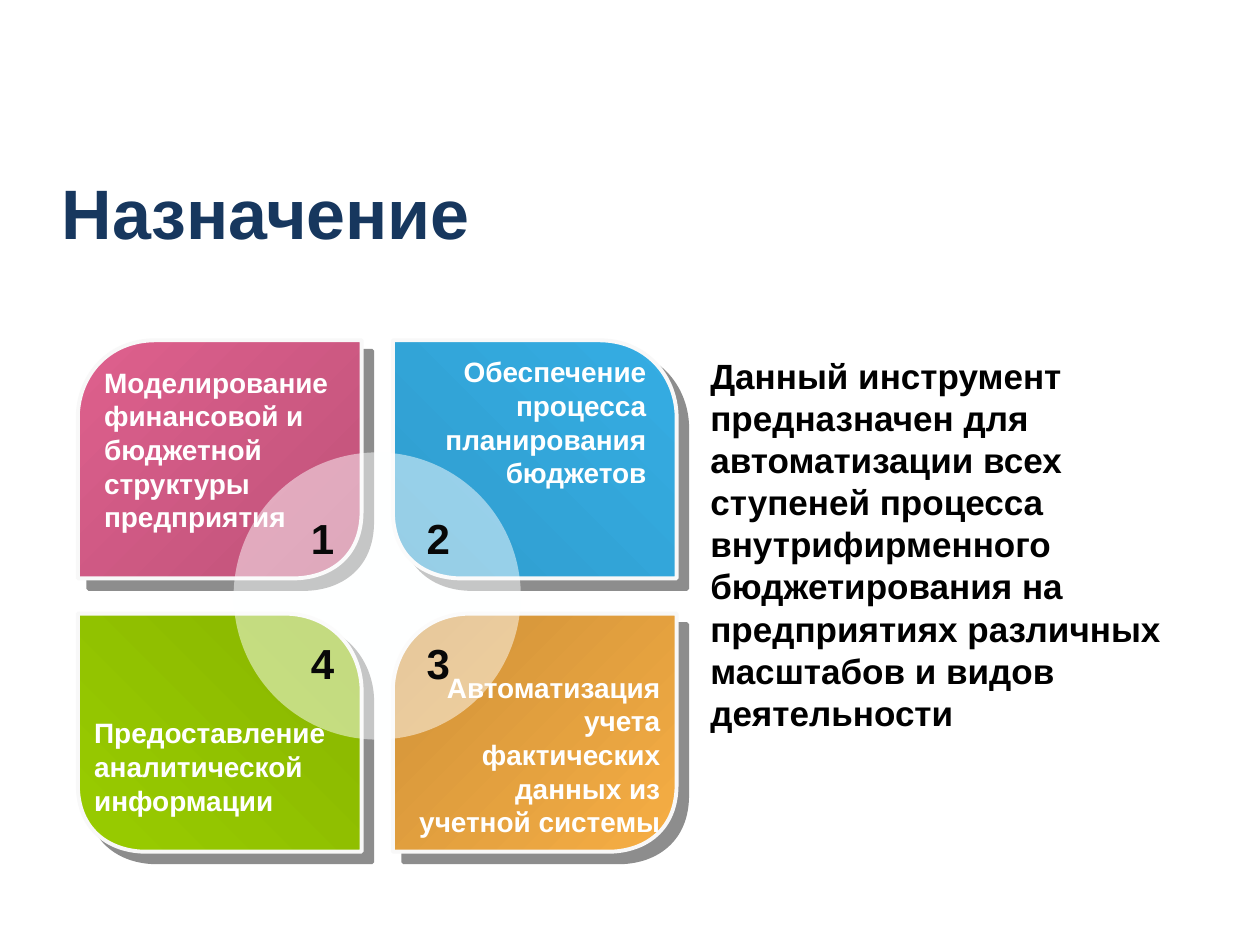
import lxml.etree
import pptx
import pptx.dml.color
import pptx.enum.shapes
import pptx.enum.text
import pptx.oxml.ns
import pptx.util

Cm = pptx.util.Cm
RGBColor = pptx.dml.color.RGBColor
Align = pptx.enum.text.PP_ALIGN
Anchor = pptx.enum.text.MSO_ANCHOR
AutoSize = pptx.enum.text.MSO_AUTO_SIZE
Preset = pptx.enum.shapes.MSO_SHAPE

NAVY = RGBColor(0x17, 0x37, 0x5E)
BLACK = RGBColor(0, 0, 0)
INK = RGBColor(0x08, 0x08, 0x08)
WHITE = RGBColor(255, 255, 255)
DISC = RGBColor(0xFE, 0xFF, 0xFF)
OUTLINE = RGBColor(0xF8, 0xF8, 0xF8)
SHADOW = RGBColor(0x1C, 0x1C, 0x1C)
PINK = RGBColor(0xDE, 0x60, 0x8D)
BLUE = RGBColor(0x35, 0xAD, 0xE3)
GREEN = RGBColor(0x99, 0xCC, 0x00)
ORANGE = RGBColor(0xF6, 0xAE, 0x44)

TITLE_FONT = {"name": "Arial", "size": pptx.util.Pt(40), "bold": True}
LABEL_FONT = {"name": "Arial", "size": pptx.util.Pt(16), "bold": True}
NUMBER_FONT = {"name": "Arial", "size": pptx.util.Pt(24), "bold": True}
BODY_FONT = {"name": "Arial", "size": pptx.util.Pt(20), "bold": True}

PETAL_WIDTH, PETAL_HEIGHT = 5.72, 4.8
DISC_SIZE = 5.79
LARGE_CORNER = [(0, 1.5), (0.03, 0.71), (0.61, 0), (1.57, 0)]
SMALL_CORNER = [(5.72, 3.45), (5.72, 4.37), (5.08, 4.78), (4.39, 4.8)]

PETALS = [
    {"column": 0, "row": 0, "color": PINK, "shades": (70.59, 100), "angle": 135,
     "number": "1", "box": (0.28, 0.38, 5.16, 3.68),
     "label": "Моделирование финансовой и бюджетной структуры предприятия"},
    {"column": 1, "row": 0, "color": BLUE, "shades": (80.39, 100), "angle": 45,
     "number": "2", "box": (6.15, 0.17, 5.56, 3),
     "label": "Обеспечение процесса планирования бюджетов"},
    {"column": 0, "row": 1, "color": GREEN, "shades": (100, 76.47), "angle": 45,
     "number": "4", "box": (0.08, 7.45, 5.56, 2.31),
     "label": "Предоставление аналитической информации"},
    {"column": 1, "row": 1, "color": ORANGE, "shades": (66.67, 100), "angle": 315,
     "number": "3", "box": (6.43, 6.53, 5.56, 3.68),
     "label": "Автоматизация учета фактических данных из учетной системы"},
]


def write_text(shape, text, font, color, alignment=Align.LEFT):
    """Write one formatted paragraph into a shape."""
    paragraph = shape.text_frame.paragraphs[0]
    paragraph.alignment = alignment
    run = paragraph.add_run()
    run.text = text
    for name, value in font.items():
        setattr(run.font, name, value)
    run.font.color.rgb = color


def add_text(slide, box, text, font, color, alignment=Align.LEFT, wrap=True):
    """Add a text box at a box given in centimetres."""
    shape = slide.shapes.add_textbox(*map(Cm, box))
    shape.text_frame.word_wrap = wrap
    shape.text_frame.auto_size = AutoSize.SHAPE_TO_FIT_TEXT
    write_text(shape, text, font, color, alignment)


def add_element(parent, tag, **attributes):
    """Append a DrawingML element to its parent."""
    element = lxml.etree.SubElement(parent, pptx.oxml.ns.qn(tag))
    for name, value in attributes.items():
        element.set(name, str(value))
    return element


def find_all(shape, tag):
    """List the elements with a tag in the shape properties."""
    return shape.element.spPr.findall(".//" + pptx.oxml.ns.qn(tag))


def add_translucent(slide, preset, box, color, opacity):
    """Add a borderless preset shape with a see-through fill."""
    shape = slide.shapes.add_shape(preset, *map(Cm, box))
    shape.shadow.inherit = False
    shape.fill.solid()
    shape.fill.fore_color.rgb = color
    shape.line.fill.background()
    add_element(find_all(shape, "a:srgbClr")[0], "a:alpha", val=opacity * 1000)
    return shape


def straight(start, end):
    """Return curve points for a straight side after its start."""
    middle = tuple((a + b) / 2 for a, b in zip(start, end))
    return [middle, end, end]


def round_sides(shape):
    """Turn each three line points of a freeform into one curve."""
    lines = find_all(shape, "a:lnTo")
    for first in range(0, len(lines), 3):
        curve = lines[first].makeelement(pptx.oxml.ns.qn("a:cubicBezTo"))
        lines[first].addprevious(curve)
        for line in lines[first:first + 3]:
            curve.append(line[0])
            line.getparent().remove(line)


def add_petal(slide, left, top, petal):
    """Draw a petal with two opposite round corners."""
    corner = PETAL_WIDTH, 0
    base = 0, PETAL_HEIGHT
    outline = [*LARGE_CORNER, *straight(LARGE_CORNER[-1], corner),
               *straight(corner, SMALL_CORNER[0]), *SMALL_CORNER[1:],
               *straight(SMALL_CORNER[-1], base), *straight(base, LARGE_CORNER[0])]
    mirrored = petal["column"] != petal["row"]
    points = [(Cm(left + (PETAL_WIDTH - x if mirrored else x)), Cm(top + y))
              for x, y in outline]
    builder = slide.shapes.build_freeform(*points[0])
    builder.add_line_segments(points[1:], close=True)
    shape = builder.convert_to_shape()
    round_sides(shape)
    shape.fill.gradient()
    shape.fill.gradient_angle = petal["angle"]
    for stop in shape.fill.gradient_stops:
        stop.color.rgb = petal["color"]
    for color, shade in zip(find_all(shape, "a:srgbClr"), petal["shades"]):
        if shade < 100:
            add_element(color, "a:shade", val=round(shade * 1000))
    shape.line.color.rgb = OUTLINE
    shape.line.width = pptx.util.Pt(2.25)
    shape.shadow.inherit = False
    shadow = add_element(find_all(shape, "a:effectLst")[0], "a:outerShdw", blurRad=0,
                         dist=pptx.util.Pt(8.5), dir=45 * 60000, algn="ctr",
                         rotWithShape=0)
    add_element(add_element(shadow, "a:srgbClr", val=SHADOW), "a:alpha", val=50000)


def add_purpose_diagram(slide, left, top, width, height):
    """Build the four petals, the disc, the labels and the numbers."""
    for petal in PETALS:
        add_petal(slide, left + petal["column"] * (width - PETAL_WIDTH),
                  top + petal["row"] * (height - PETAL_HEIGHT), petal)
    add_translucent(slide, Preset.OVAL,
                    (left + (width - DISC_SIZE) / 2, top + (height - DISC_SIZE) / 2,
                     DISC_SIZE, DISC_SIZE), DISC, 50)
    for petal in PETALS:
        x, y, *size = petal["box"]
        add_text(slide, (left + x, top + y, *size), petal["label"], LABEL_FONT, WHITE,
                 Align.RIGHT if petal["column"] else Align.LEFT)
    for petal in PETALS:
        x, y = 4.45 + petal["column"] * 2.33, 3.35 + petal["row"] * 2.52
        add_text(slide, (left + x, top + y, 0.99, 1.27), petal["number"],
                 NUMBER_FONT, INK, wrap=False)


def add_backdrop(slide, box):
    """Lay the pale panel behind everything else."""
    panel = add_translucent(slide, Preset.RECTANGLE, box, WHITE, 81)
    slide.shapes.title.element.addprevious(panel.element)


def add_title(slide, box):
    """Place and format the title placeholder."""
    title = slide.shapes.title
    title.left, title.top, title.width, title.height = map(Cm, box)
    title.text_frame.vertical_anchor = Anchor.MIDDLE
    write_text(title, "Назначение", TITLE_FONT, NAVY)


def add_description(slide, box):
    """Add the description beside the diagram."""
    add_text(slide, box, "Данный инструмент предназначен для автоматизации всех ступеней "
             "процесса внутрифирменного бюджетирования на предприятиях различных "
             "масштабов и видов деятельности", BODY_FONT, BLACK)


def main():
    """Build and save the presentation."""
    presentation = pptx.Presentation()
    presentation.slide_width, presentation.slide_height = Cm(25.4), Cm(19.05)
    slide = presentation.slides.add_slide(presentation.slide_layouts[5])
    add_backdrop(slide, (0, 2.54, 25.4, 16.51))
    add_title(slide, (0.99, 3.33, 23.34, 1.88))
    add_purpose_diagram(slide, 1.57, 6.86, 12.07, 10.31)
    add_description(slide, (14.07, 7.03, 10.92, 7.95))
    presentation.save("out.pptx")


if __name__ == "__main__":
    main()
